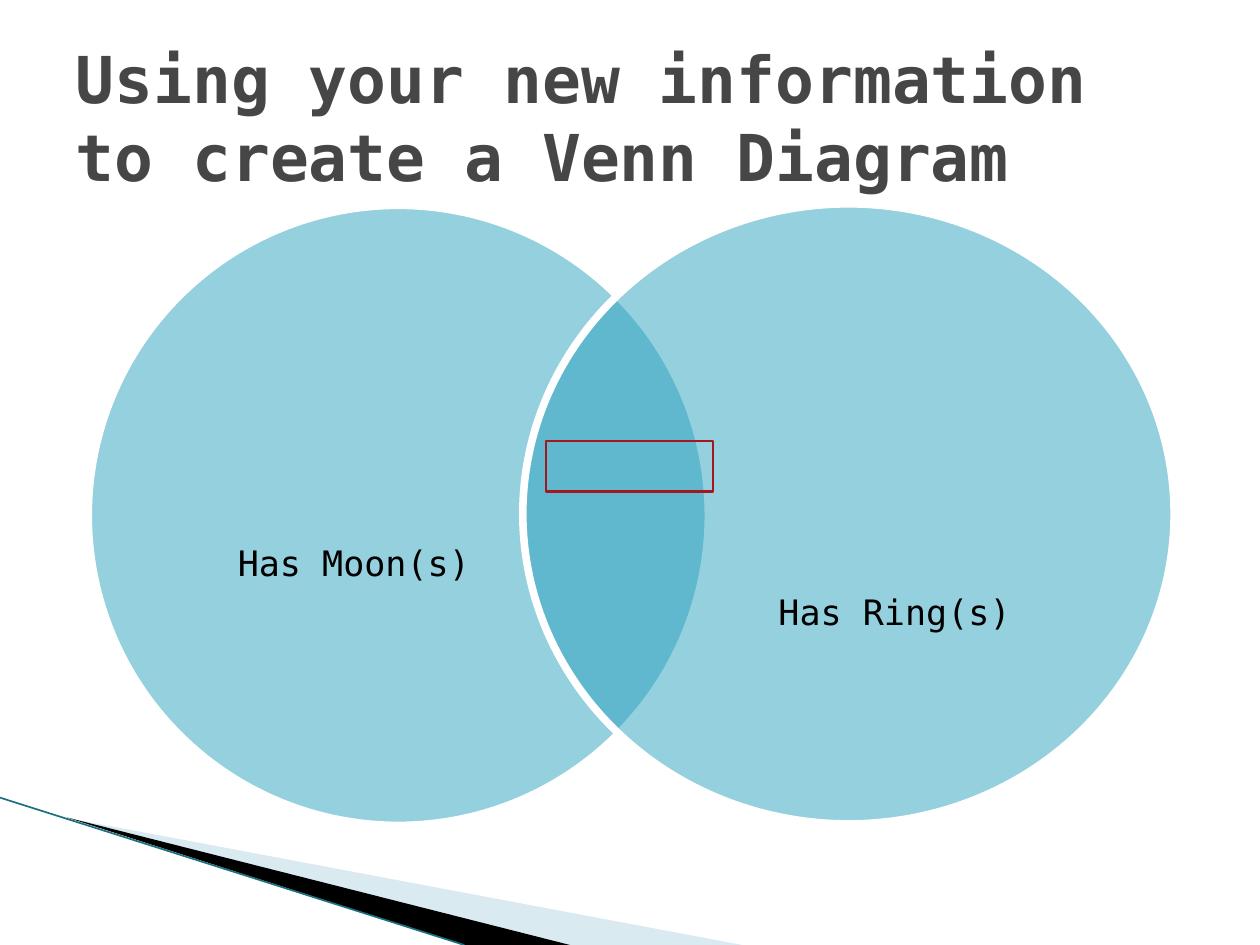
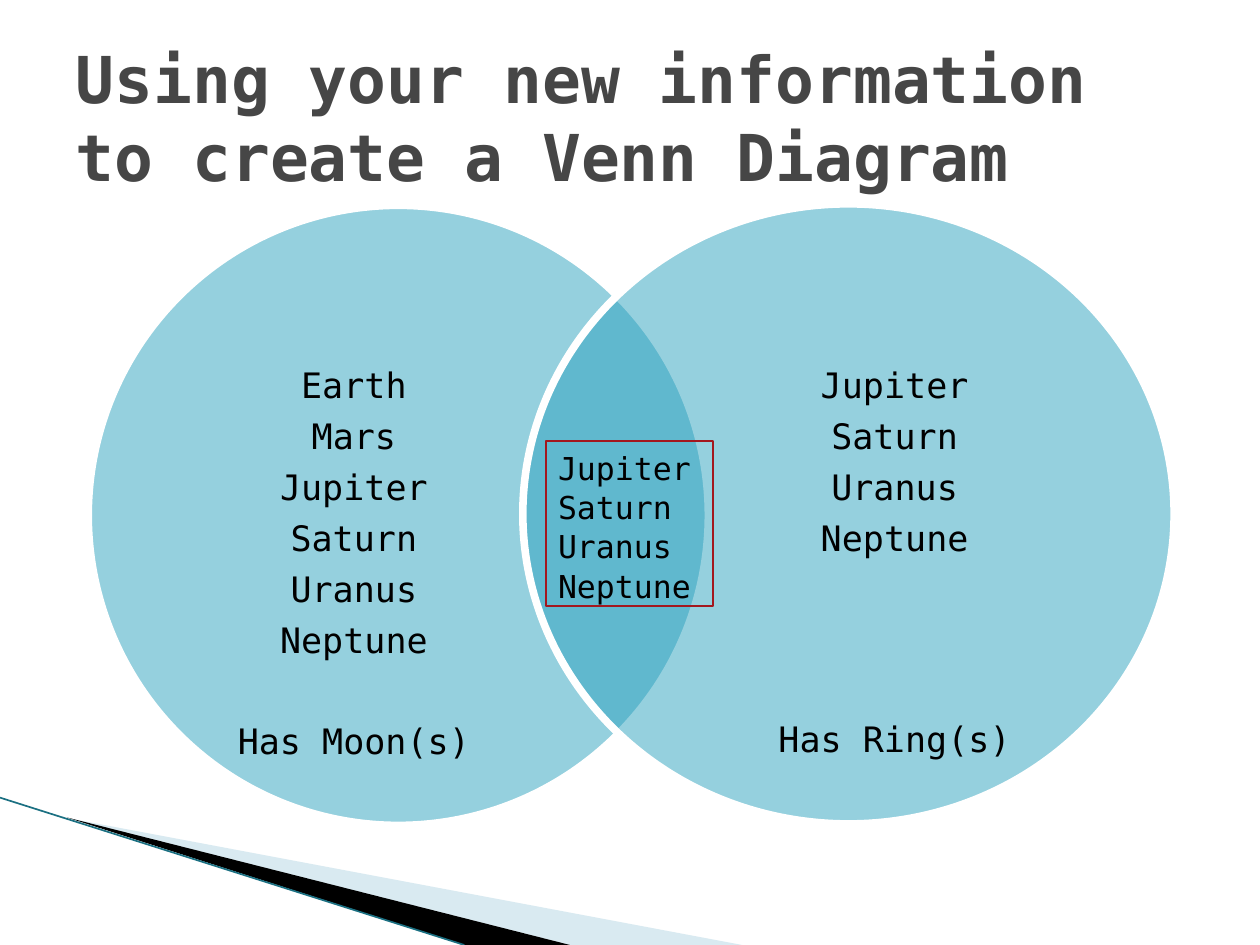
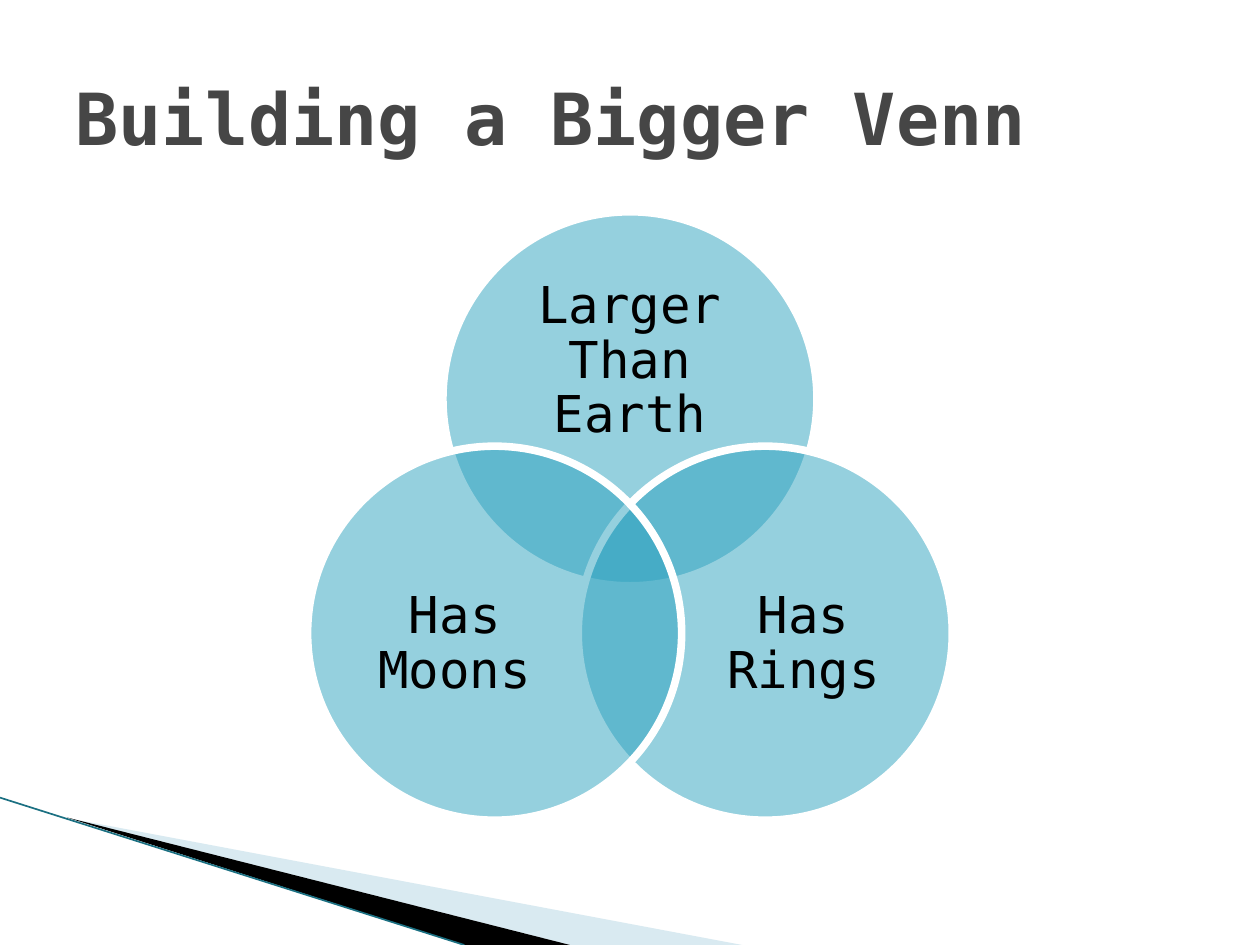
from math import cos, radians, sin

from lxml.etree import SubElement
from pptx import Presentation
from pptx.dml.color import RGBColor
from pptx.enum.shapes import MSO_CONNECTOR, MSO_SHAPE
from pptx.enum.text import MSO_ANCHOR, MSO_AUTO_SIZE, PP_ALIGN
from pptx.oxml.ns import qn
from pptx.util import Cm, Pt

BLACK = RGBColor(0x00, 0x00, 0x00)
WHITE = RGBColor(0xFF, 0xFF, 0xFF)
TITLE_GREY = RGBColor(0x46, 0x46, 0x46)
CIRCLE_BLUE = RGBColor(0x2D, 0xA2, 0xBF)
BAND_BLUE = RGBColor(0xA0, 0xCB, 0xDC)
EDGE_TEAL = RGBColor(0x1B, 0x70, 0x82)
FRAME_RED = RGBColor(0xA3, 0x17, 0x1E)

FONT = "DejaVu Sans Mono"
LINE_GAP = 7.6
ROW_PITCH = 28.57
TITLE_ONLY = 5
NO_MARGINS = dict.fromkeys(
    ("margin_left", "margin_top", "margin_right", "margin_bottom"), 0)

VENN_TITLE = "Using your new information to create a Venn Diagram"
SHARED_PLANETS = ["Jupiter", "Saturn", "Uranus", "Neptune"]
MOON_PLANETS = ["Earth", "Mars"] + SHARED_PLANETS
MOON_CIRCLE = (1.78, 4.14, 12.5, 12.5)
RING_CIRCLE = (10.54, 4.11, 13.13, 12.5)
MOON_TEXT = (3.53, 5.61, 7.21, 9.55)
RING_TEXT = (14.25, 5.59, 7.57, 9.55)


def set_all(target, values):
    for name, value in values.items():
        setattr(target, name, value)


def format_font(paragraph, size, color=BLACK, bold=False):
    set_all(paragraph.font, {"name": FONT, "size": Pt(size), "bold": bold})
    paragraph.font.color.rgb = color


def set_transparency(shape, opacity):
    color = shape.fill._xPr.find(qn("a:solidFill"))[0]
    SubElement(color, qn("a:alpha"), val=str(opacity * 1000))


def fill_shape(shape, color, opacity=100):
    shape.shadow.inherit = False
    shape.fill.solid()
    shape.fill.fore_color.rgb = color
    if opacity < 100:
        set_transparency(shape, opacity)


def outline(shape, color, width):
    shape.line.color.rgb = color
    shape.line.width = Pt(width)


def write_lines(text_frame, lines, size, values):
    for index, line in enumerate(lines):
        paragraph = text_frame.paragraphs[0] if index == 0 else text_frame.add_paragraph()
        paragraph.text = line
        set_all(paragraph, values)
        format_font(paragraph, size)


def add_band(slide, points, color, opacity=100):
    corners = [(Cm(x), Cm(y)) for x, y in points]
    builder = slide.shapes.build_freeform(*corners[0])
    builder.add_line_segments(corners[1:])
    band = builder.convert_to_shape()
    fill_shape(band, color, opacity)
    band.line.fill.background()


def add_corner_bands(slide):
    add_band(slide, [(1.4, 16.5), (14.96, 19.05), (11.49, 19.05)], BAND_BLUE, 40)
    add_band(slide, [(1.35, 16.48), (11.49, 19.05), (9.36, 19.05)], BLACK)
    edge = slide.shapes.add_connector(
        MSO_CONNECTOR.STRAIGHT, Cm(0), Cm(16.08), Cm(9.36), Cm(19.05))
    outline(edge, EDGE_TEAL, 0.95)
    SubElement(edge._element.spPr, qn("a:effectLst"))


def add_titled_slide(presentation, text, size):
    slide = presentation.slides.add_slide(presentation.slide_layouts[TITLE_ONLY])
    title = slide.shapes.title
    set_all(title, {"left": Cm(1.27), "top": Cm(0.76),
                    "width": Cm(22.86), "height": Cm(3.18)})
    title.text_frame.text = text
    set_all(title.text_frame, {"word_wrap": True, "auto_size": MSO_AUTO_SIZE.NONE,
                               "vertical_anchor": MSO_ANCHOR.MIDDLE})
    paragraph = title.text_frame.paragraphs[0]
    paragraph.alignment = PP_ALIGN.LEFT
    format_font(paragraph, size, TITLE_GREY, True)
    add_corner_bands(slide)
    return slide


def add_circle(slide, box):
    circle = slide.shapes.add_shape(MSO_SHAPE.OVAL, *map(Cm, box))
    fill_shape(circle, CIRCLE_BLUE, 50)
    outline(circle, WHITE, 4.33)


def add_circle_text(slide, box, lines, size, rows_above=0):
    left, top, width, height = map(Cm, box)
    top += Pt(rows_above * ROW_PITCH / 2)
    text_frame = slide.shapes.add_textbox(left, top, width, height).text_frame
    set_all(text_frame, {"word_wrap": True, "vertical_anchor": MSO_ANCHOR.MIDDLE,
                         **NO_MARGINS})
    write_lines(text_frame, lines, size, {
        "alignment": PP_ALIGN.CENTER, "line_spacing": 0.9, "space_after": Pt(LINE_GAP)})
    return text_frame


def add_planet_list(slide, box, planets, label, rows_above, rows_between):
    text_frame = add_circle_text(slide, box, planets + [label], 20, rows_above)
    if planets:
        last_planet = text_frame.paragraphs[-2]
        last_planet.space_after = Pt(LINE_GAP + rows_between * ROW_PITCH)


def add_overlap_frame(slide, planets, height):
    frame = slide.shapes.add_shape(
        MSO_SHAPE.RECTANGLE, Cm(11), Cm(8.89), Cm(3.38), Cm(height))
    frame.shadow.inherit = False
    frame.fill.background()
    outline(frame, FRAME_RED, 1.25)
    set_all(frame.text_frame, {"word_wrap": True, "vertical_anchor": MSO_ANCHOR.TOP})
    write_lines(frame.text_frame, planets, 18,
                {"alignment": PP_ALIGN.LEFT, "line_spacing": 1.04})


def add_two_circle_slide(presentation, moons, rings, overlap, ring_rows_above, frame_height):
    slide = add_titled_slide(presentation, VENN_TITLE, 36.9)
    add_circle(slide, MOON_CIRCLE)
    add_planet_list(slide, MOON_TEXT, moons, "Has Moon(s)", 2, 1)
    add_circle(slide, RING_CIRCLE)
    add_planet_list(slide, RING_TEXT, rings, "Has Ring(s)", ring_rows_above, 3)
    add_overlap_frame(slide, overlap, frame_height)


def add_three_circle_slide(presentation):
    slide = add_titled_slide(presentation, "Building a Bigger Venn", 41)
    diameter, distance = 7.54, 3.15
    circles = [
        (-90, "Larger Than Earth", (9.93, 5.59, 5.54, 3.4)),
        (30, "Has Rings", (13.94, 10.92, 4.52, 4.14)),
        (150, "Has Moons", (6.91, 10.92, 4.52, 4.14)),
    ]
    for angle, label, text_box in circles:
        left = 12.7 + distance * cos(radians(angle)) - diameter / 2
        top = 11.19 + distance * sin(radians(angle)) - diameter / 2
        add_circle(slide, (left, top, diameter, diameter))
        add_circle_text(slide, text_box, [label], 29)


def main():
    presentation = Presentation()
    presentation.slide_width = Cm(25.4)
    presentation.slide_height = Cm(19.05)
    add_two_circle_slide(presentation, [], [], [], 4, 1.02)
    add_two_circle_slide(presentation, MOON_PLANETS, SHARED_PLANETS, SHARED_PLANETS, 2, 3.33)
    add_three_circle_slide(presentation)
    presentation.save("out.pptx")


if __name__ == "__main__":
    main()
